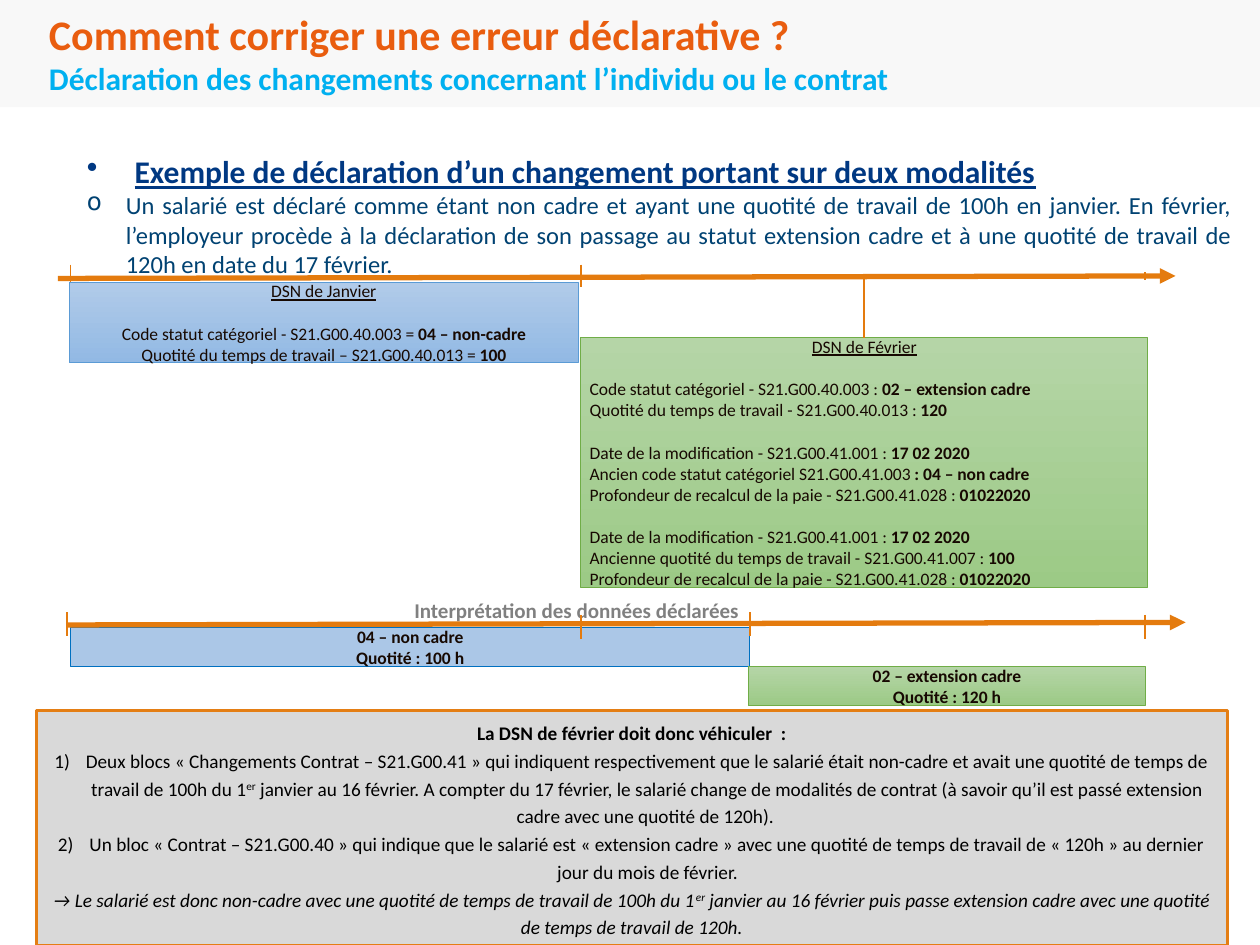
"""Build the slide on declaring a change to a contract."""
from lxml import etree
from pptx import Presentation
from pptx.dml.color import RGBColor
from pptx.enum.shapes import MSO_CONNECTOR, MSO_SHAPE
from pptx.enum.text import MSO_ANCHOR, PP_ALIGN
from pptx.oxml.ns import qn
from pptx.util import Inches, Pt

RECT, LINE = MSO_SHAPE.RECTANGLE, MSO_CONNECTOR.STRAIGHT
TOP, MIDDLE = MSO_ANCHOR.TOP, MSO_ANCHOR.MIDDLE
LEFT, CENTER, JUSTIFY = PP_ALIGN.LEFT, PP_ALIGN.CENTER, PP_ALIGN.JUSTIFY
FONT = "Calibri"
ORANGE, INK = "E47B0E", "170902"
GREEN, BLUE = ("B5D5A7", "9CCA86"), ("B1CBE9", "92B9E4")
ROW = 12.2

JANUARY = [
    [("DSN de Janvier", "u")],
    [("Code statut catégoriel - S21.G00.40.003 = ", ""), ("04 – non-cadre", "b")],
    [("Quotité du temps de travail – S21.G00.40.013 = ", ""), ("100", "b")],
]
DATE = [("Date de la modification - S21.G00.41.001 : ", ""), ("17 02 2020", "b")]
DEPTH = [("Profondeur de recalcul de la paie - S21.G00.41.028 : ", ""), ("01022020", "b")]
FEBRUARY = [
    [("DSN de Février", "u")],
    [("Code statut catégoriel - S21.G00.40.003 : ", ""), ("02 – extension cadre", "b")],
    [("Quotité du temps de travail - S21.G00.40.013 : ", ""), ("120", "b")],
    DATE,
    [("Ancien code statut catégoriel S21.G00.41.003 ", ""), (": 04 – non cadre", "b")],
    DEPTH,
    DATE,
    [("Ancienne quotité du temps de travail - S21.G00.41.007 : ", ""), ("100", "b")],
    DEPTH,
]
SUMMARY = [
    [("La DSN de février doit donc véhiculer  :", "b")],
    [("Deux blocs « Changements Contrat – S21.G00.41 » qui indiquent respectivement que "
      "le salarié était non-cadre et avait une quotité de temps de travail de 100h du 1", ""),
     ("er", "s"),
     (" janvier au 16 février. A compter du 17 février, le salarié change de modalités de "
      "contrat (à savoir qu’il est passé extension cadre avec une quotité de 120h). ", "")],
    [("Un bloc « Contrat – S21.G00.40 » qui indique que le salarié est « extension cadre » "
      "avec une quotité de temps de travail de « 120h » au dernier jour du mois de février.", "")],
    [("→ Le salarié est donc non-cadre avec une quotité de temps de travail de 100h du 1", "i"),
     ("er", "is"),
     (" janvier au 16 février puis passe extension cadre avec une quotité de temps de "
      "travail de 120h.", "i")],
]


def rgb(code):
    """Turn a hex string into a colour."""
    return RGBColor.from_string(code)


def add_run(para, text, size, color, style=""):
    """Add a run; style letters: b bold, i italic, u underline, s superscript."""
    run = para.add_run()
    run.text = text
    font = run.font
    font.name, font.size = FONT, Pt(size)
    font.color.rgb = rgb(color)
    font.bold, font.italic, font.underline = "b" in style, "i" in style, "u" in style
    if "s" in style:
        run._r.get_or_add_rPr().set("baseline", "30000")


def add_bullet(para, indent, tag, **attrs):
    """Give a paragraph a hanging bullet or number."""
    props = para._p.get_or_add_pPr()
    props.set("marL", str(Inches(indent)))
    props.set("indent", str(-Inches(indent)))
    etree.SubElement(props, qn(tag), attrs)


def next_para(frame, align=LEFT):
    """Return the empty first paragraph or a new one."""
    para = frame.paragraphs[0]
    if para.runs:
        para = frame.add_paragraph()
    para.alignment = align
    return para


def add_text(slide, left, top, width, height, wrap=True):
    """Add a text box and return its frame."""
    box = slide.shapes.add_textbox(Inches(left), Inches(top), Inches(width), Inches(height))
    box.text_frame.word_wrap = wrap
    return box.text_frame


def add_rect(slide, place, fill, line=None, weight=0.5):
    """Add a rectangle with a plain fill or a downward gradient."""
    rect = slide.shapes.add_shape(RECT, *map(Inches, place))
    rect.shadow.inherit = False
    if isinstance(fill, tuple):
        rect.fill.gradient()
        rect.fill.gradient_angle = 270
        for stop, color in zip(rect.fill.gradient_stops, fill):
            stop.color.rgb = rgb(color)
    else:
        rect.fill.solid()
        rect.fill.fore_color.rgb = rgb(fill)
    if line:
        rect.line.color.rgb = rgb(line)
        rect.line.width = Pt(weight)
    else:
        rect.line.fill.background()
    return rect


def add_card(slide, place, fill, line, rows, gaps=(), align=CENTER):
    """Add a card of small rows, with one row of space before each gap index."""
    card = add_rect(slide, place, fill, line)
    frame = card.text_frame
    frame.word_wrap, frame.vertical_anchor = True, MIDDLE
    frame.margin_left = frame.margin_right = Inches(0.07)
    frame.margin_top = frame.margin_bottom = Inches(0.04)
    for num, row in enumerate(rows):
        para = next_para(frame, align if num else CENTER)
        if num in gaps:
            para.space_before = Pt(ROW)
        for text, style in row:
            add_run(para, text, 10, INK, style)
    return card


def add_line(slide, x1, y1, x2, y2, weight=1, arrow=False):
    """Add an orange line, with an arrowhead at its end if asked."""
    line = slide.shapes.add_connector(LINE, *map(Inches, (x1, y1, x2, y2)))
    line.line.color.rgb = rgb(ORANGE)
    line.line.width = Pt(weight)
    if arrow:
        etree.SubElement(line.line._get_or_add_ln(), qn("a:tailEnd"), type="triangle")
    etree.SubElement(line._element.spPr, qn("a:effectLst"))
    return line


def add_header(slide):
    """Add the title band."""
    add_rect(slide, (0, 0, 10, 0.85), "F8F8F8")
    para = next_para(add_text(slide, 0.29, 0.02, 9.51, 0.71))
    add_run(para, "Comment corriger une erreur déclarative ?", 24, "E95D0F", "b")
    para.add_line_break()
    add_run(para, "Déclaration des changements concernant l’individu ou le contrat",
            18, "00B0F0", "b")


def add_intro(slide):
    """Add the heading of the example and its description."""
    frame = add_text(slide, 0.59, 1.16, 9.29, 1.1)
    para = next_para(frame, JUSTIFY)
    add_bullet(para, 0.38, "a:buChar", char="•")
    add_run(para, "Exemple de déclaration d’un changement portant sur deux modalités",
            18, "003882", "bu")
    para = next_para(frame, JUSTIFY)
    add_bullet(para, 0.31, "a:buChar", char="o")
    add_run(para, "Un salarié est déclaré comme étant non cadre et ayant une quotité de travail "
            "de 100h en janvier. En février, l’employeur procède à la déclaration de son passage "
            "au statut extension cadre et à une quotité de travail de 120h en date du 17 février.",
            14, "004272")


def add_summary(slide):
    """Add the grey box with the conclusion."""
    box = add_rect(slide, (0.29, 5.64, 9.45, 1.86), "D9D9D9", "E47E14", 1.5)
    frame = box.text_frame
    frame.word_wrap, frame.vertical_anchor = True, TOP
    for num, row in enumerate(SUMMARY):
        para = next_para(frame, CENTER)
        para.line_spacing = 1.2
        if num in (1, 2):
            add_bullet(para, 0.25, "a:buAutoNum", type="arabicParenR")
        for text, style in row:
            add_run(para, text, 11, "000000", style)


def add_declared(slide):
    """Add the timeline of the two declarations."""
    add_line(slide, 0.46, 2.21, 9.33, 2.19, 3, True)
    for x, top, end in ((0.56, 2.1, 2.29), (4.61, 2.1, 2.28), (9.09, 2.16, 2.22)):
        add_line(slide, x, top, x, end)
    card = add_card(slide, (4.61, 2.68, 4.5, 1.98), GREEN, "70AD47", FEBRUARY, (1, 3, 6), LEFT)
    add_line(slide, 6.86, 2.2, 6.86, 2.68).end_connect(card, 0)
    add_card(slide, (0.55, 2.24, 4.04, 0.64), BLUE, "5B9BD5", JANUARY, (1,))


def add_reading(slide):
    """Add the timeline of how the data are read."""
    para = next_para(add_text(slide, 3.19, 4.69, 2.84, 0.3, False))
    add_run(para, "Interprétation des données déclarées", 12, "808080", "b")
    add_card(slide, (0.56, 4.98, 5.39, 0.31), "ABC7E7", "0070C0",
             [[("04 – non cadre", "b")], [("Quotité : 100 h", "b")]])
    add_card(slide, (5.94, 5.29, 3.15, 0.31), GREEN, "70AD47",
             [[("02 – extension cadre", "b")], [("Quotité : 120 h", "b")]])
    for x, top in ((0.53, 4.86), (4.61, 4.88), (5.95, 4.86), (9.09, 4.88)):
        add_line(slide, x, top, x, top + 0.19)
    add_line(slide, 0.54, 4.96, 9.41, 4.94, 3, True)


def main():
    """Build and save the slide."""
    deck = Presentation()
    deck.slide_width, deck.slide_height = Inches(10), Inches(7.5)
    slide = deck.slides.add_slide(deck.slide_layouts[6])
    for part in (add_header, add_intro, add_summary, add_declared, add_reading):
        part(slide)
    deck.save("out.pptx")


if __name__ == "__main__":
    main()
